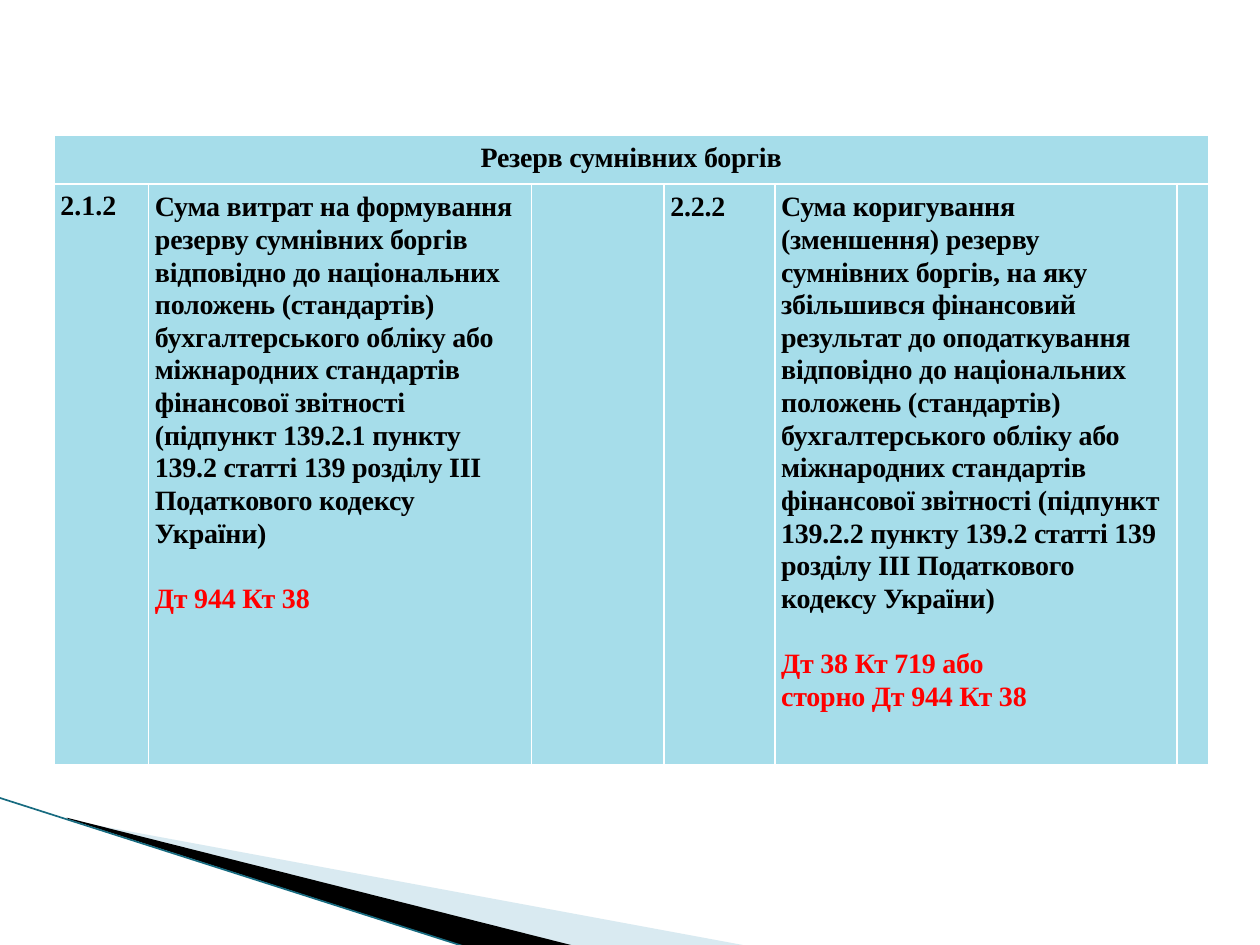
from dataclasses import dataclass

from lxml.etree import SubElement
from pptx import Presentation
from pptx.dml.color import RGBColor
from pptx.enum.shapes import MSO_CONNECTOR as Connector
from pptx.enum.text import PP_ALIGN as Align
from pptx.oxml.ns import qn
from pptx.util import Inches, Pt


@dataclass(frozen=True)
class Theme:
    font: str = "Times New Roman"
    size: float = 16
    spacing: float = 1.05
    tracking: int = -10
    entry_gap: float = 18.7
    border: float = 1
    edge: float = 0.95
    text: str = "000000"
    accent: str = "FF0000"
    cell: str = "A6DDEA"
    rule: str = "FFFFFF"
    pale: str = "A0CBDC"
    dark: str = "000000"
    teal: str = "176B80"


class SlideBuilder:
    """Draws on one slide; lengths are units of a grid of 100 columns by 75 rows."""

    def __init__(self, deck, theme):
        self.theme = theme
        self.column = deck.slide_width / 100
        self.row = deck.slide_height / 75
        self.shapes = deck.slides.add_slide(deck.slide_layouts[6]).shapes

    def place(self, x, y):
        return round(x * self.column), round(y * self.row)

    def wedge(self, points, color, opacity=100):
        start, *others = [self.place(*point) for point in points]
        builder = self.shapes.build_freeform(*start, scale=1.0)
        builder.add_line_segments(others, close=True)
        shape = builder.convert_to_shape()
        shape.shadow.inherit = False
        shape.line.fill.background()
        shape.fill.solid()
        shape.fill.fore_color.rgb = RGBColor.from_string(color)
        if opacity < 100:
            tint = shape._element.spPr.find(f"{qn('a:solidFill')}/{qn('a:srgbClr')}")
            SubElement(tint, qn("a:alpha"), val=str(opacity * 1000))

    def line(self, start, end, color):
        line = self.shapes.add_connector(
            Connector.STRAIGHT, *self.place(*start), *self.place(*end))
        line.line.color.rgb = RGBColor.from_string(color)
        line.line.width = Pt(self.theme.edge)
        SubElement(line._element.spPr, qn("a:effectLst"))

    def table(self, left, top, widths, heights):
        frame = self.shapes.add_table(
            len(heights), len(widths), *self.place(left, top),
            *self.place(sum(widths), sum(heights)))
        table = frame.table
        table.first_row = table.horz_banding = False
        for column, width in zip(table.columns, widths):
            column.width = round(width * self.column)
        for row, height in zip(table.rows, heights):
            row.height = round(height * self.row)
        for cell in table.iter_cells():
            self.style_cell(cell)
        return table

    def style_cell(self, cell):
        cell.margin_left = cell.margin_right = Inches(0.05)
        cell.margin_top = cell.margin_bottom = Inches(0.05)
        properties = cell._tc.get_or_add_tcPr()
        for side in ("lnL", "lnR", "lnT", "lnB"):
            border = SubElement(properties, qn(f"a:{side}"), w=str(Pt(self.theme.border)))
            fill = SubElement(border, qn("a:solidFill"))
            SubElement(fill, qn("a:srgbClr"), val=self.theme.rule)
        cell.fill.solid()
        cell.fill.fore_color.rgb = RGBColor.from_string(self.theme.cell)

    def cell_text(self, cell, text, entries=(), align=Align.LEFT, spaced=True):
        """Fill a cell with a text and, set apart below it, accounting entries."""
        theme = self.theme
        cell.text_frame.text = "\n".join((text, *entries))
        for index, para in enumerate(cell.text_frame.paragraphs):
            para.alignment = align
            if spaced:
                para.line_spacing = theme.spacing
            if index == 1:
                para.space_before = Pt(theme.entry_gap)
            color = theme.accent if index else theme.text
            for span in para.runs:
                span.font.name = theme.font
                span.font.size = Pt(theme.size)
                span.font.bold = True
                span.font.color.rgb = RGBColor.from_string(color)
                if spaced:
                    span._r.get_or_add_rPr().set("spc", str(theme.tracking))


EXPENSE = (
    "Сума витрат на формування резерву сумнівних боргів відповідно до "
    "національних положень (стандартів) бухгалтерського обліку або міжнародних "
    "стандартів фінансової звітності (підпункт 139.2.1 пункту 139.2 статті 139 "
    "розділу III Податкового кодексу України)")
ADJUSTMENT = (
    "Сума коригування (зменшення) резерву сумнівних боргів, на яку збільшився "
    "фінансовий результат до оподаткування відповідно до національних положень "
    "(стандартів) бухгалтерського обліку або міжнародних стандартів фінансової "
    "звітності (підпункт 139.2.2 пункту 139.2 статті 139 розділу III "
    "Податкового кодексу України)")


def main():
    deck = Presentation()
    deck.slide_width, deck.slide_height = Inches(10), Inches(7.5)
    theme = Theme()
    slide = SlideBuilder(deck, theme)

    slide.wedge([(5.5, 65.1), (59.5, 75.1), (45.6, 75.1), (5.5, 65)], theme.pale, 40)
    slide.wedge([(5.3, 64.9), (45.7, 75.1), (37.2, 75.2), (5.4, 65)], theme.dark)
    slide.line((-0.1, 63.3), (37.1, 75.2), theme.teal)

    reserve = slide.table(4.3, 10.7, [7.5, 30.4, 10.5, 8.8, 31.9, 2.5], [3.9, 46.1])
    heading = reserve.cell(0, 0)
    heading.merge(reserve.cell(0, 5))
    slide.cell_text(heading, "Резерв сумнівних боргів", align=Align.CENTER)
    slide.cell_text(reserve.cell(1, 0), "2.1.2", spaced=False)
    slide.cell_text(reserve.cell(1, 1), EXPENSE, ["Дт 944 Кт 38"])
    slide.cell_text(reserve.cell(1, 3), "2.2.2")
    slide.cell_text(reserve.cell(1, 4), ADJUSTMENT,
                    ["Дт 38 Кт 719 або", "сторно Дт 944 Кт 38"])
    deck.save("out.pptx")


if __name__ == "__main__":
    main()
